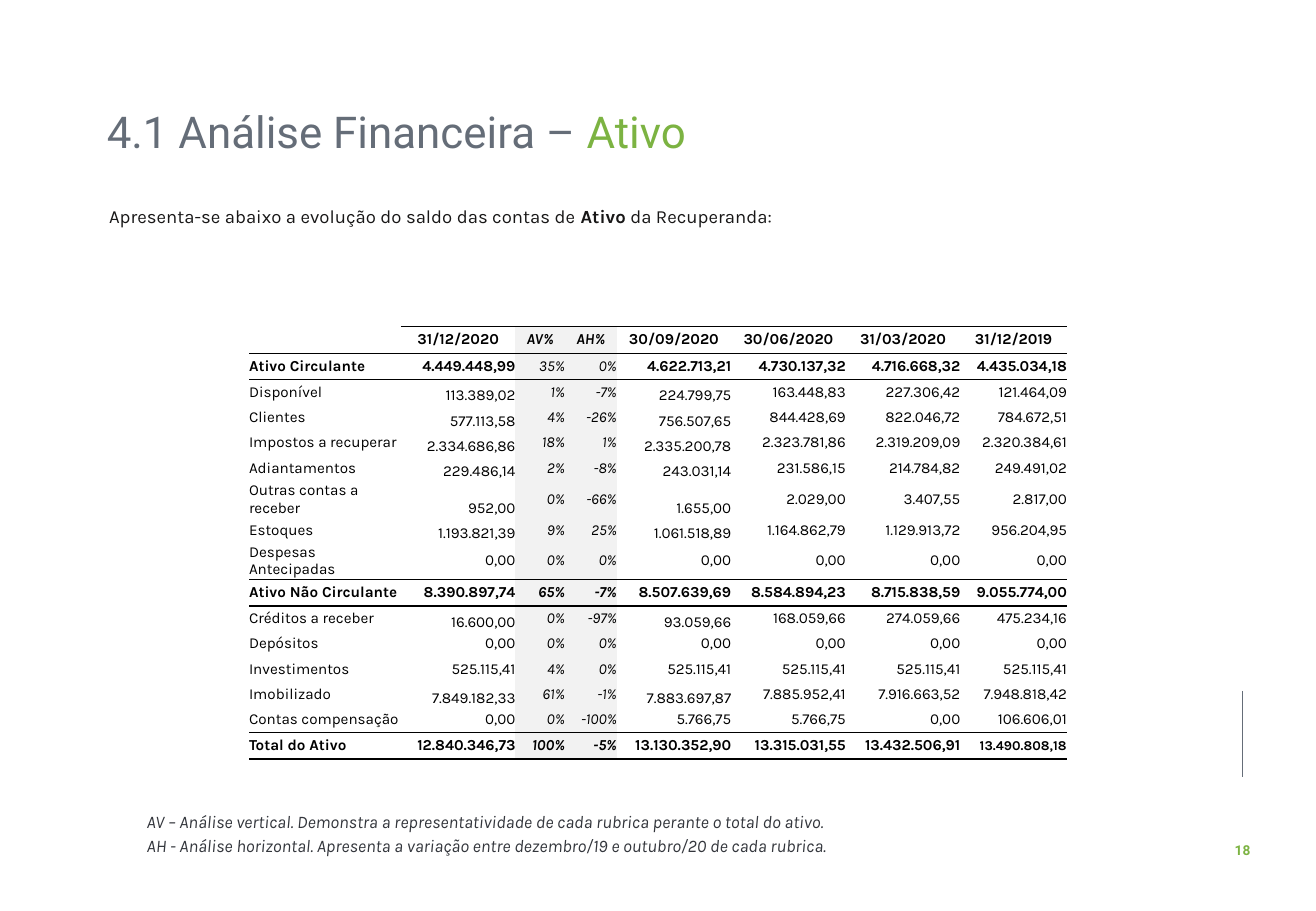
"""Build the balance-sheet slide on the evolution of assets."""
import pptx
import pptx.dml.color
import pptx.enum.shapes
import pptx.enum.text
import pptx.oxml.ns
import pptx.util
from lxml import etree

Pt = pptx.util.Pt
RGBColor = pptx.dml.color.RGBColor
ALIGN = pptx.enum.text.PP_ALIGN
ANCHOR = pptx.enum.text.MSO_ANCHOR
qn = pptx.oxml.ns.qn

SLATE = RGBColor(0x65, 0x6D, 0x78)
GREEN = RGBColor(0x7C, 0xB3, 0x42)
INK = RGBColor(0x18, 0x17, 0x17)
NOTE_GRAY = RGBColor(0x33, 0x36, 0x3C)
BLACK = RGBColor(0, 0, 0)
SHADE = RGBColor(0xF2, 0xF2, 0xF2)

COLUMN_WIDTHS = (90, 67.9, 29.2, 30.8, 67.9, 67.9, 67.9, 63.2)
PERCENT_COLUMNS = (2, 3)
LOW_COLUMNS = (1, 4)
LOW_ROWS = (2, 3, 4, 5, 6, 7, 10, 13)
BOLD_ROWS = (0, 1, 9, 15)
RULES = {0: 0.5, 1: 0.5, 2: 1, 9: 0.5, 10: 1, 15: 0.5, 16: 1}
ASSETS = (
    ("", "31/12/2020", "AV%", "AH%", "30/09/2020", "30/06/2020", "31/03/2020", "31/12/2019"),
    ("Ativo Circulante", "4.449.448,99", "35%", "0%", "4.622.713,21", "4.730.137,32", "4.716.668,32", "4.435.034,18"),
    ("Disponível", "113.389,02", "1%", "-7%", "224.799,75", "163.448,83", "227.306,42", "121.464,09"),
    ("Clientes", "577.113,58", "4%", "-26%", "756.507,65", "844.428,69", "822.046,72", "784.672,51"),
    ("Impostos a recuperar", "2.334.686,86", "18%", "1%", "2.335.200,78", "2.323.781,86", "2.319.209,09", "2.320.384,61"),
    ("Adiantamentos", "229.486,14", "2%", "-8%", "243.031,14", "231.586,15", "214.784,82", "249.491,02"),
    ("Outras contas a receber", "952,00", "0%", "-66%", "1.655,00", "2.029,00", "3.407,55", "2.817,00"),
    ("Estoques", "1.193.821,39", "9%", "25%", "1.061.518,89", "1.164.862,79", "1.129.913,72", "956.204,95"),
    ("Despesas Antecipadas", "0,00", "0%", "0%", "0,00", "0,00", "0,00", "0,00"),
    ("Ativo Não Circulante", "8.390.897,74", "65%", "-7%", "8.507.639,69", "8.584.894,23", "8.715.838,59", "9.055.774,00"),
    ("Créditos a receber", "16.600,00", "0%", "-97%", "93.059,66", "168.059,66", "274.059,66", "475.234,16"),
    ("Depósitos", "0,00", "0%", "0%", "0,00", "0,00", "0,00", "0,00"),
    ("Investimentos", "525.115,41", "4%", "0%", "525.115,41", "525.115,41", "525.115,41", "525.115,41"),
    ("Imobilizado", "7.849.182,33", "61%", "-1%", "7.883.697,87", "7.885.952,41", "7.916.663,52", "7.948.818,42"),
    ("Contas compensação", "0,00", "0%", "-100%", "5.766,75", "5.766,75", "0,00", "106.606,01"),
    ("Total do Ativo", "12.840.346,73", "100%", "-5%", "13.130.352,90", "13.315.031,55", "13.432.506,91", "13.490.808,18"),
)
NOTES = (
    "AV – Análise vertical. Demonstra a representatividade de cada rubrica perante o total do ativo.",
    "AH - Análise horizontal. Apresenta a variação entre dezembro/19 e outubro/20 de cada rubrica.",
)


def add_run(paragraph, text, font_name, size, color, bold=False, italic=False):
    """Append one formatted run to a paragraph."""
    run = paragraph.add_run()
    run.text = text
    run.font.name = font_name
    run.font.size = Pt(size)
    run.font.color.rgb = color
    run.font.bold = bold
    run.font.italic = italic


def add_text(slide, box, paragraphs, align, line_spacing=1.0, indent=0, wrap=True):
    """Add a text box whose paragraphs are lists of run settings."""
    shape = slide.shapes.add_textbox(*map(Pt, box))
    frame = shape.text_frame
    frame.word_wrap = wrap
    for index, runs in enumerate(paragraphs):
        paragraph = frame.add_paragraph() if index else frame.paragraphs[0]
        paragraph.alignment = align
        paragraph.line_spacing = line_spacing
        if indent:
            paragraph._p.get_or_add_pPr().set("indent", str(Pt(indent)))
        for run in runs:
            add_run(paragraph, *run)


def add_line(slide, start, end, color, width):
    """Add a straight line without a shadow."""
    line = slide.shapes.add_connector(
        pptx.enum.shapes.MSO_CONNECTOR.STRAIGHT, *map(Pt, start + end))
    line.line.color.rgb = color
    line.line.width = Pt(width)
    etree.SubElement(line._element.spPr, qn("a:effectLst"))


def set_borders(cell, top, bottom):
    """Draw the horizontal rules of a cell and leave its other sides clear."""
    properties = cell._tc.get_or_add_tcPr()
    for side, width in (("L", None), ("R", None), ("T", top), ("B", bottom)):
        border = etree.SubElement(properties, qn(f"a:ln{side}"))
        if width:
            border.set("w", str(Pt(width)))
            fill = etree.SubElement(border, qn("a:solidFill"))
            etree.SubElement(fill, qn("a:srgbClr")).set("val", str(BLACK))
        else:
            etree.SubElement(border, qn("a:noFill"))


def fill_cell(cell, row, column, text):
    """Write and format one cell according to its row and column."""
    percent = column in PERCENT_COLUMNS
    corner = row == column == 0
    set_borders(cell, None if corner else RULES.get(row), RULES.get(row + 1))
    if percent:
        cell.fill.solid()
        cell.fill.fore_color.rgb = SHADE
    else:
        cell.fill.background()
    cell.margin_left = cell.margin_right = cell.margin_top = cell.margin_bottom = 0
    low = row in LOW_ROWS and column in LOW_COLUMNS
    cell.vertical_anchor = ANCHOR.BOTTOM if low else ANCHOR.MIDDLE
    paragraph = cell.text_frame.paragraphs[0]
    if corner:
        etree.SubElement(paragraph._p, qn("a:endParaRPr")).set("sz", "900")
        return
    if column == 0:
        paragraph.alignment = ALIGN.LEFT
    else:
        paragraph.alignment = ALIGN.RIGHT if row else ALIGN.CENTER
    bold = row in BOLD_ROWS and not (row == 1 and percent)
    last = row == len(ASSETS) - 1 and column == len(COLUMN_WIDTHS) - 1
    add_run(paragraph, text, "Karla", 8 if last else 9, BLACK, bold, percent)


def add_assets_table(slide, left, top):
    """Add the table of asset balances."""
    heights = [15.8 if row in BOLD_ROWS else 15 for row in range(len(ASSETS))]
    shape = slide.shapes.add_table(
        len(ASSETS), len(COLUMN_WIDTHS), Pt(left), Pt(top),
        Pt(sum(COLUMN_WIDTHS)), Pt(sum(heights)))
    table = shape.table
    table.first_row = table.horz_banding = False
    for column, width in zip(table.columns, COLUMN_WIDTHS):
        column.width = Pt(width)
    for row, values in enumerate(ASSETS):
        table.rows[row].height = Pt(heights[row])
        for column, text in enumerate(values):
            fill_cell(table.cell(row, column), row, column, text)


def main():
    """Create the presentation and save it."""
    presentation = pptx.Presentation()
    presentation.slide_width = Pt(780)
    presentation.slide_height = Pt(540)
    slide = presentation.slides.add_slide(presentation.slide_layouts[6])
    add_line(slide, (736.5, 409.5), (736.5, 460.5), SLATE, 0.5)
    add_text(slide, (724.3, 495.4, 24.5, 17.3),
             [[("18", "Roboto", 8.1, GREEN, True)]], ALIGN.CENTER, wrap=False)
    add_text(slide, (56.2, 61.9, 589, 38.2),
             [[("4.1 Análise Financeira – ", "Roboto", 26, SLATE),
               ("Ativo", "Roboto", 26, GREEN)]], ALIGN.LEFT, 0.9)
    add_text(slide, (57.6, 111.6, 626.4, 25.2),
             [[("Apresenta-se abaixo a evolução do saldo das contas de ", "Karla", 11, INK),
               ("Ativo", "Karla", 11, INK, True),
               (" da Recuperanda:", "Karla", 11, INK)]], ALIGN.JUSTIFY, 1.5)
    add_text(slide, (57.6, 475.2, 626.4, 35.3),
             [[(note, "Karla", 10.5, NOTE_GRAY, False, True)] for note in NOTES],
             ALIGN.JUSTIFY, 1.14, 22.3)
    add_assets_table(slide, 147.6, 193.4)
    presentation.save("out.pptx")


if __name__ == "__main__":
    main()
